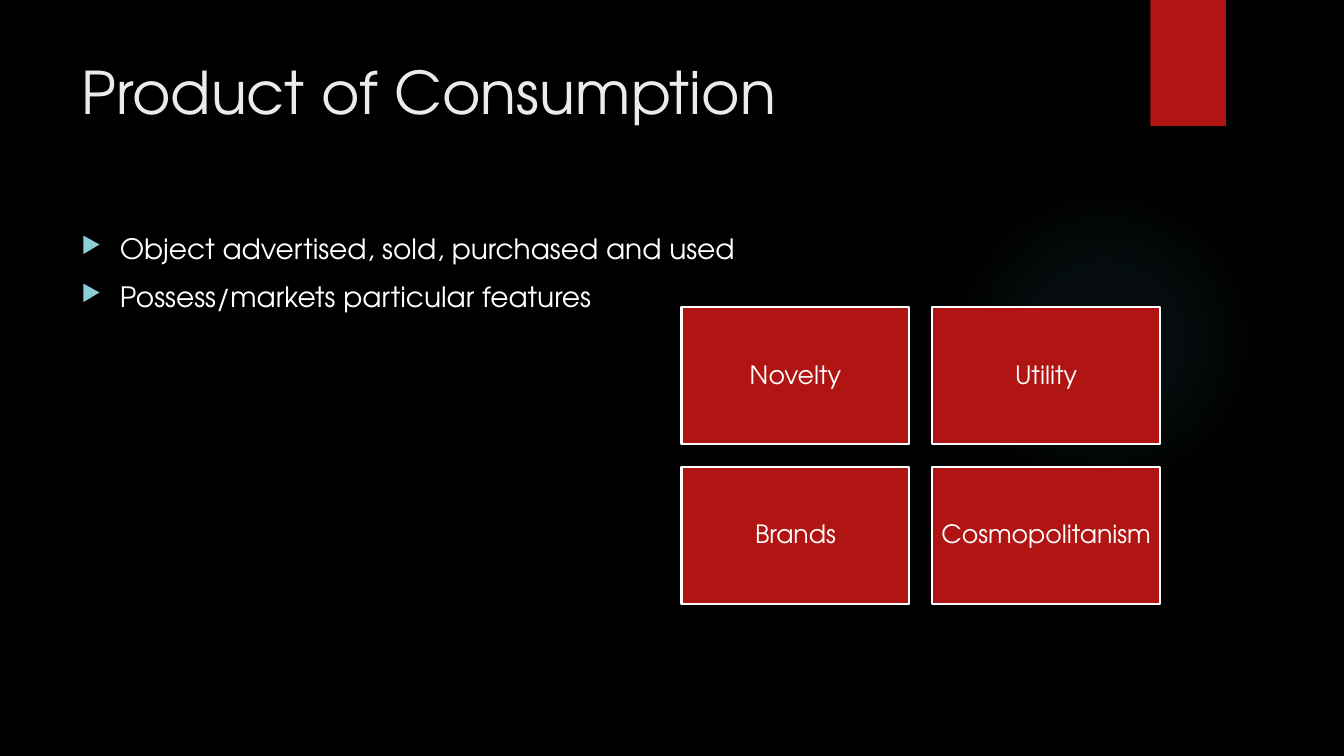
import pptx
import pptx.util
import pptx.dml.color
import pptx.enum.shapes
import pptx.enum.text
import pptx.oxml
import pptx.oxml.ns

Inches = pptx.util.Inches
Pt = pptx.util.Pt
RGBColor = pptx.dml.color.RGBColor
SHAPES = pptx.enum.shapes.MSO_SHAPE

BLACK = RGBColor(0x00, 0x00, 0x00)
WHITE = RGBColor(0xFF, 0xFF, 0xFF)
PALE = RGBColor(0xEB, 0xEB, 0xEB)
RED = RGBColor(0xB0, 0x15, 0x13)
TEAL = RGBColor(0x50, 0xB9, 0xC1)
AQUA = RGBColor(0x8A, 0xD0, 0xD6)
FONT = "TeX Gyre Adventor"
NAMESPACE = pptx.oxml.ns.nsdecls("a")


def add_block(kind, left, top, width, height):
    block = page.shapes.add_shape(
        kind, Inches(left), Inches(top), Inches(width), Inches(height))
    block.shadow.inherit = False
    block.fill.solid()
    block.fill.fore_color.rgb = RED
    block.line.fill.background()
    return block


def style(para, size, color):
    for span in para.runs:
        span.font.name = FONT
        span.font.size = Pt(size)
        span.font.color.rgb = color


deck = pptx.Presentation()
deck.slide_width = Inches(13.33)
deck.slide_height = Inches(7.5)
page = deck.slides.add_slide(deck.slide_layouts[6])
page.background.fill.solid()
page.background.fill.fore_color.rgb = BLACK

# Soft glow: a circular gradient fading outwards
glow = add_block(SHAPES.OVAL, 9.41, 1.83, 3.08, 3.08)
stops = "".join(
    f'<a:gs pos="{place * 1000}"><a:srgbClr val="{TEAL}">'
    f'<a:alpha val="{alpha * 1000}"/></a:srgbClr></a:gs>'
    for place, alpha in [(0, 7), (36, 6), (69, 0), (100, 0)])
gradient = pptx.oxml.parse_xml(
    f'<a:gradFill {NAMESPACE} rotWithShape="1"><a:gsLst>{stops}</a:gsLst>'
    '<a:path path="circle"><a:fillToRect l="50000" t="50000" r="50000" b="50000"/>'
    '</a:path></a:gradFill>')
properties = glow.element.spPr
properties.replace(properties.find(pptx.oxml.ns.qn("a:solidFill")), gradient)

# Red ribbon at the top edge
add_block(SHAPES.RECTANGLE, 11.41, 0, 0.75, 1.25)

# Title
title = page.shapes.add_textbox(Inches(0.71), Inches(0.5), Inches(10.29), Inches(1.53))
title.text_frame.word_wrap = True
title.text_frame.text = "Product of Consumption"
style(title.text_frame.paragraphs[0], 42, PALE)

# Bulleted statements
body = page.shapes.add_textbox(Inches(0.71), Inches(2.25), Inches(6.96), Inches(4.59))
body.text_frame.word_wrap = True
body.text_frame.text = ("Object advertised, sold, purchased and used\n"
                        "Possess/markets particular features")
for index, para in enumerate(body.text_frame.paragraphs):
    settings = para._p.get_or_add_pPr()
    settings.set("marL", str(Inches(0.38)))
    settings.set("indent", str(-Inches(0.38)))
    for bullet in (f'<a:buClr {NAMESPACE}><a:srgbClr val="{AQUA}"/></a:buClr>',
                   f'<a:buSzPct {NAMESPACE} val="80000"/>',
                   f'<a:buChar {NAMESPACE} char="▶"/>'):
        settings.append(pptx.oxml.parse_xml(bullet))
    para.space_before = Pt(10 if index else 0)
    style(para, 20, WHITE)

# Two-by-two grid of features
CARD_WIDTH, CARD_HEIGHT = 2.26, 1.36
GAP = CARD_WIDTH / 10
for index, feature in enumerate(["Novelty", "Utility", "Brands", "Cosmopolitanism"]):
    row, column = divmod(index, 2)
    card = add_block(SHAPES.RECTANGLE,
                     6.76 + column * (CARD_WIDTH + GAP),
                     3.05 + row * (CARD_HEIGHT + GAP),
                     CARD_WIDTH, CARD_HEIGHT)
    card.line.color.rgb = WHITE
    card.line.width = Pt(1.5)
    frame = card.text_frame
    frame.margin_left = frame.margin_right = Inches(0.07)
    frame.margin_top = frame.margin_bottom = Inches(0.07)
    frame.word_wrap = True
    frame.vertical_anchor = pptx.enum.text.MSO_ANCHOR.MIDDLE
    frame.text = feature
    para = frame.paragraphs[0]
    para.alignment = pptx.enum.text.PP_ALIGN.CENTER
    para.line_spacing = 0.9
    style(para, 18, WHITE)

deck.save("out.pptx")
